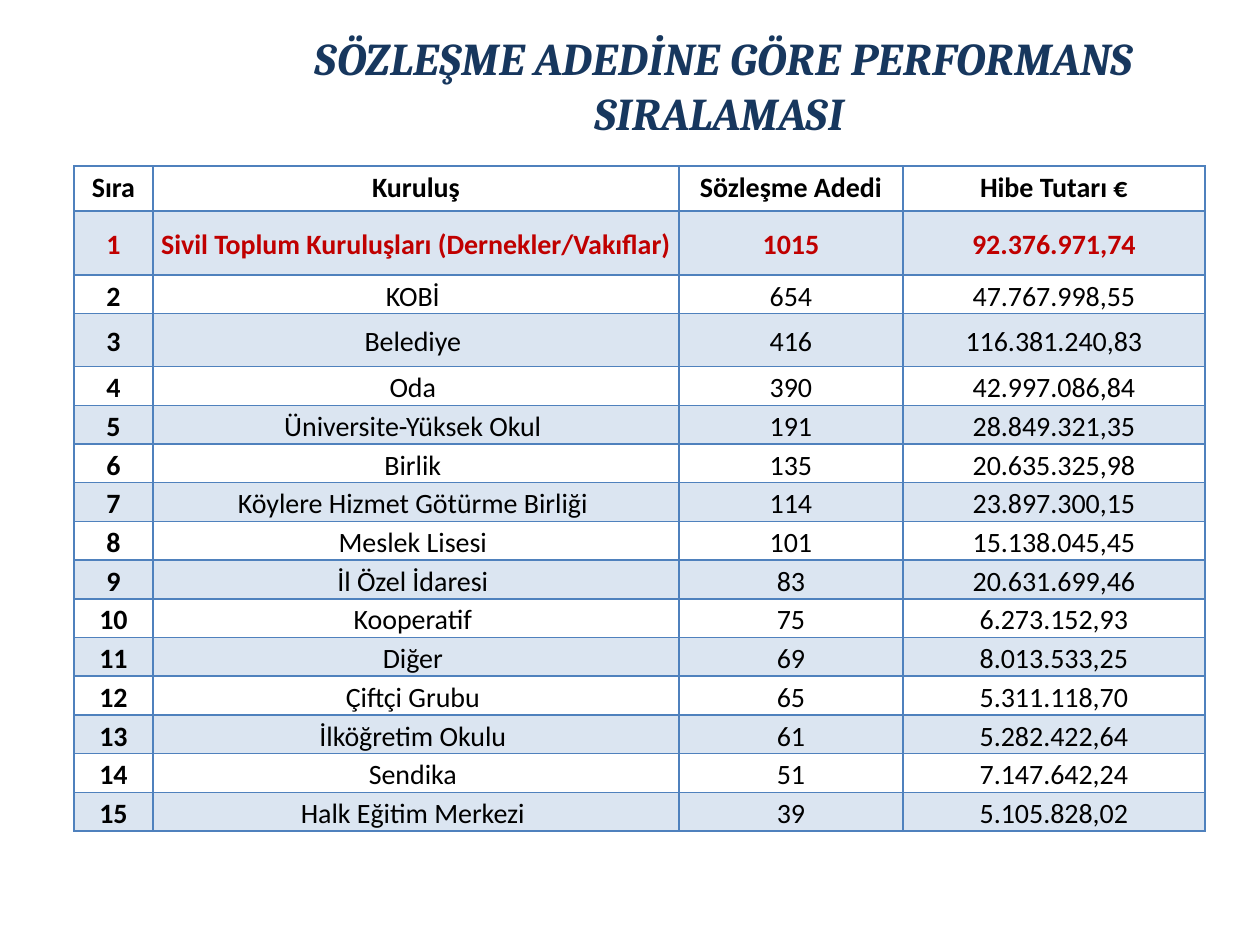
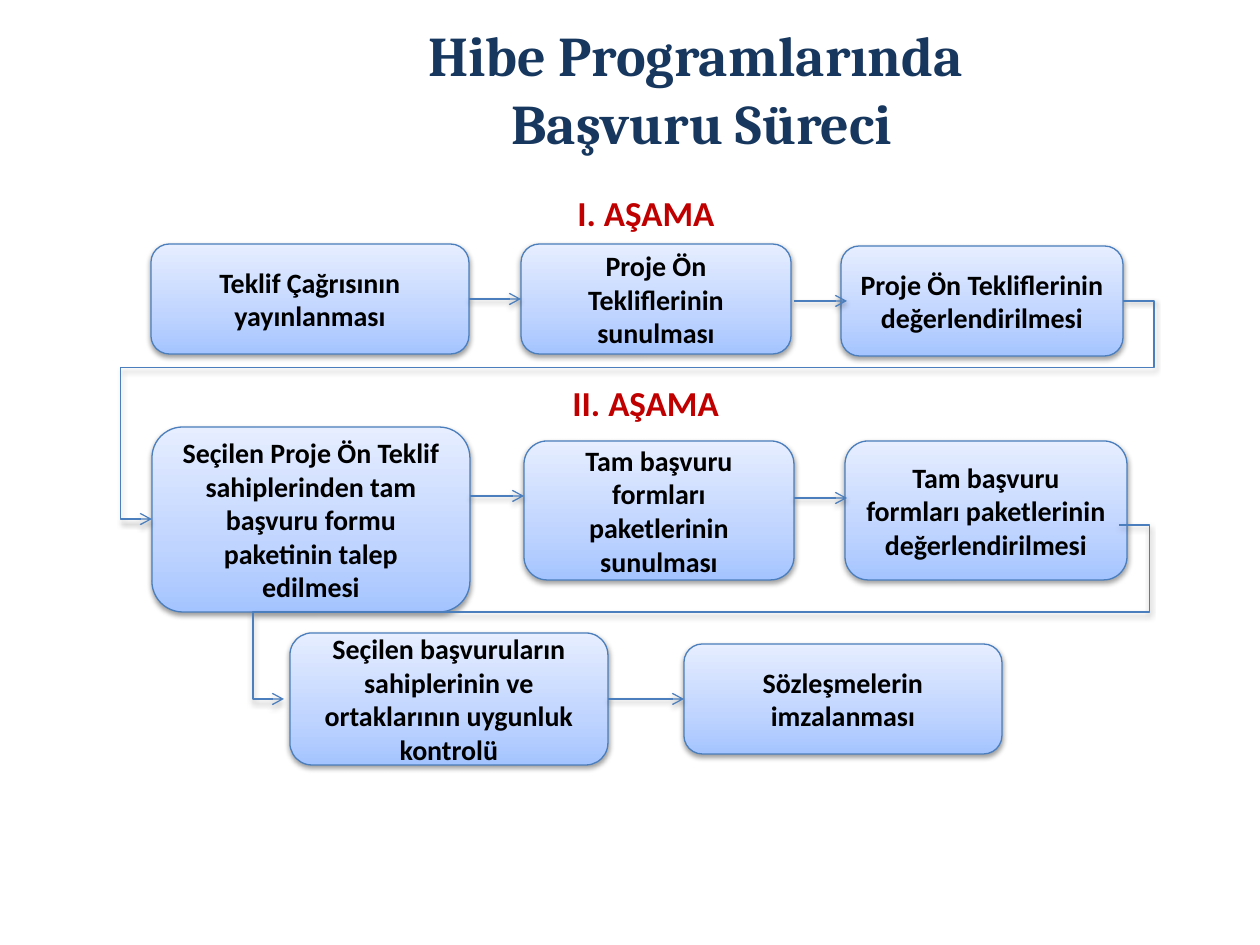
from copy import deepcopy

from lxml.etree import SubElement
from pptx import Presentation
from pptx.dml.color import RGBColor
from pptx.enum.shapes import MSO_CONNECTOR, MSO_SHAPE
from pptx.enum.text import MSO_ANCHOR, MSO_AUTO_SIZE, PP_ALIGN
from pptx.oxml.ns import qn
from pptx.util import Emu, Pt

EMU_PER_PX = 914400 / 126
NAVY = RGBColor(0x17, 0x37, 0x5E)
RED = RGBColor(0xC0, 0x00, 0x00)
BLACK = RGBColor(0x00, 0x00, 0x00)
BLUE = RGBColor(0x4F, 0x81, 0xBD)
OUTLINE = RGBColor(0x4B, 0x7E, 0xBC)
BOX_STOPS = [
    (0, RGBColor(0xA4, 0xC4, 0xFF)),
    (0.35, RGBColor(0xBF, 0xD4, 0xFF)),
    (1, RGBColor(0xE6, 0xEE, 0xFF)),
]
# Light Style 1 - Accent 1: blue rules around the header and under the last row
RULED_TABLE_STYLE = "{3C2FFA5D-87B4-456A-9821-1D502468CF0F}"

TABLE_HEIGHT = 665
COLUMN_WIDTHS = [79, 526, 224, 302]
ROW_HEIGHTS = [45, 64, 37, 53] + [37] * 12
HEADERS = ["Sıra", "Kuruluş", "Sözleşme Adedi", "Hibe Tutarı €"]
RANKING = [
    ("Sivil Toplum Kuruluşları (Dernekler/Vakıflar)", "1015", "92.376.971,74"),
    ("KOBİ ", "654", "47.767.998,55"),
    ("Belediye ", "416", "116.381.240,83\u00a0".strip()),
    ("Oda ", "390", "42.997.086,84"),
    ("Üniversite-Yüksek Okul ", "191", "28.849.321,35"),
    ("Birlik ", "135", "20.635.325,98"),
    ("Köylere Hizmet Götürme Birliği ", "114", "23.897.300,15"),
    ("Meslek Lisesi ", "101", "15.138.045,45"),
    ("İl Özel İdaresi ", "83", "20.631.699,46"),
    ("Kooperatif ", "75", "6.273.152,93"),
    ("Diğer ", "69", "8.013.533,25"),
    ("Çiftçi Grubu ", "65", "5.311.118,70"),
    ("İlköğretim Okulu ", "61", "5.282.422,64"),
    ("Sendika ", "51", "7.147.642,24"),
    ("Halk Eğitim Merkezi ", "39", "5.105.828,02"),
]

STEPS = {
    "call": ("Teklif Çağrısının yayınlanması", (151, 244, 318, 110)),
    "pre_submit": ("Proje Ön Tekliflerinin sunulması", (521, 244, 270, 110)),
    "pre_review": ("Proje Ön Tekliflerinin değerlendirilmesi", (841, 246, 282, 110)),
    "request": ("Seçilen Proje Ön Teklif sahiplerinden tam başvuru formu "
                "paketinin talep edilmesi", (152, 427, 318, 185)),
    "full_submit": ("Tam başvuru formları paketlerinin sunulması", (524, 441, 270, 139)),
    "full_review": ("Tam başvuru formları paketlerinin değerlendirilmesi",
                    (845, 441, 282, 139)),
    "contract": ("Sözleşmelerin imzalanması", (684, 644, 318, 110)),
    "check": ("Seçilen başvuruların sahiplerinin ve ortaklarının uygunluk kontrolü",
              (290, 633, 318, 132)),
}
JOINED_ARROWS = [("call", "pre_submit"), ("check", "contract")]
FREE_ARROWS = [(794, 301, 847, 301), (470, 496, 524, 496), (794, 498, 847, 498)]
RETURN_ARROWS = [((1123, 301, 152, 519), 0.306), ((1119, 525, 284, 699), 0.5)]
RETURN_MARGIN = 31
STAGES = [("I. AŞAMA", (565, 185, 164, 55)), ("II. AŞAMA", (560, 375, 174, 55))]


def px(*values):
    return [Emu(round(v * EMU_PER_PX)) for v in values]


def write(tf, text, size=16, color=BLACK, font="Calibri", bold=True, italic=False,
          align=PP_ALIGN.CENTER, spacing=None):
    """Fill a text frame, one paragraph for each line of text."""
    tf.text = text
    for p in tf.paragraphs:
        p.alignment = align
        if spacing:
            p.line_spacing = spacing
        for r in p.runs:
            r.font.name, r.font.size = font, Pt(size)
            r.font.bold, r.font.italic = bold, italic
            r.font.color.rgb = color


def add_titled_slide(prs, title, box, size, anchor, italic=False):
    slide = prs.slides.add_slide(prs.slide_layouts[5])
    sp = slide.shapes.title
    sp.left, sp.top, sp.width, sp.height = px(*box)
    tf = sp.text_frame
    tf.auto_size = MSO_AUTO_SIZE.NONE
    tf.word_wrap = True
    tf.vertical_anchor = anchor
    write(tf, title, size=size, color=NAVY, font="Cambria", italic=italic)
    return slide


def fill_band(cell):
    """Tint a cell with blue at 20 % opacity."""
    cell.fill.solid()
    cell.fill.fore_color.rgb = BLUE
    color = cell._tc.tcPr.find(f"{qn('a:solidFill')}/{qn('a:srgbClr')}")
    SubElement(color, qn("a:alpha"), val="20000")


def add_ranking_table(slide):
    rows = [HEADERS] + [(str(n), *row) for n, row in enumerate(RANKING, 1)]
    frame = slide.shapes.add_table(
        len(rows), len(HEADERS), *px(74, 166, sum(COLUMN_WIDTHS), TABLE_HEIGHT))
    table = frame.table
    table._tbl.tblPr.find(qn("a:tableStyleId")).text = RULED_TABLE_STYLE
    for column, width in zip(table.columns, px(*COLUMN_WIDTHS)):
        column.width = width
    for row, height in zip(table.rows, px(*ROW_HEIGHTS)):
        row.height = height
    frame.height, = px(TABLE_HEIGHT)
    for i, values in enumerate(rows):
        for j, value in enumerate(values):
            cell = table.cell(i, j)
            cell.margin_left, cell.margin_right = px(7, 7)
            cell.margin_top = cell.margin_bottom = 0
            cell.vertical_anchor = MSO_ANCHOR.MIDDLE if i else MSO_ANCHOR.TOP
            write(cell.text_frame, value, color=RED if i == 1 else BLACK,
                  bold=i < 2 or j == 0, spacing=1.13)
            if i % 2:
                fill_band(cell)
            else:
                cell.fill.background()


def add_shadow(sp):
    spPr = sp._element.spPr
    effects = spPr.find(qn("a:effectLst"))
    if effects is None:
        effects = SubElement(spPr, qn("a:effectLst"))
    shadow = SubElement(effects, qn("a:outerShdw"), blurRad="40000", dist="20000",
                        dir="5400000", rotWithShape="0")
    color = SubElement(shadow, qn("a:srgbClr"), val=str(BLACK))
    SubElement(color, qn("a:alpha"), val="38000")


def set_outline(sp):
    sp.line.color.rgb = OUTLINE
    sp.line.width = Pt(0.75)


def add_step(slide, text, box):
    sp = slide.shapes.add_shape(MSO_SHAPE.ROUNDED_RECTANGLE, *px(*box))
    sp.fill.gradient()
    sp.fill.gradient_angle = 90
    stops = sp._element.spPr.find(f"{qn('a:gradFill')}/{qn('a:gsLst')}")
    stops.insert(1, deepcopy(stops[0]))
    for stop, (position, color) in zip(sp.fill.gradient_stops, BOX_STOPS):
        stop.position = position
        stop.color.rgb = color
    set_outline(sp)
    sp.shadow.inherit = False
    add_shadow(sp)
    sp.text_frame.word_wrap = True
    sp.text_frame.vertical_anchor = MSO_ANCHOR.MIDDLE
    write(sp.text_frame, text)
    return sp


def add_arrow(slide, ends, kind=MSO_CONNECTOR.STRAIGHT):
    arrow = slide.shapes.add_connector(kind, *px(*ends))
    set_outline(arrow)
    SubElement(arrow._element.spPr.find(qn("a:ln")), qn("a:tailEnd"), type="arrow")
    add_shadow(arrow)
    return arrow


def join_steps(slide, start, end):
    arrow = add_arrow(slide, (0, 0, 1, 1))
    arrow.begin_connect(start, 3)
    arrow.end_connect(end, 1)


def add_return_arrow(slide, ends, turn):
    """Lead back to the next row; turn is the share of the height where it crosses."""
    arrow = add_arrow(slide, ends, MSO_CONNECTOR.ELBOW)
    geometry = arrow._element.spPr.find(qn("a:prstGeom"))
    geometry.set("prst", "bentConnector5")
    guides = geometry.find(qn("a:avLst"))
    if guides is None:
        guides = SubElement(geometry, qn("a:avLst"))
    margin = RETURN_MARGIN / abs(ends[0] - ends[2])
    for n, share in enumerate((-margin, turn, 1 + margin), 1):
        SubElement(guides, qn("a:gd"), name=f"adj{n}",
                   fmla=f"val {round(share * 100000)}")


def add_stage_label(slide, text, box):
    tf = slide.shapes.add_textbox(*px(*box)).text_frame
    tf.word_wrap = False
    write(tf, text, size=20, color=RED, align=PP_ALIGN.LEFT)


def build_ranking_slide(prs):
    slide = add_titled_slide(prs, "SÖZLEŞME ADEDİNE GÖRE PERFORMANS SIRALAMASI ",
                             (189, 24, 1071, 123), 26, MSO_ANCHOR.TOP, italic=True)
    add_ranking_table(slide)


def build_process_slide(prs):
    slide = add_titled_slide(prs, "Hibe Programlarında \nBaşvuru Süreci",
                             (203, 32, 998, 112), 32, MSO_ANCHOR.MIDDLE)
    steps = {key: add_step(slide, *step) for key, step in STEPS.items()}
    for start, end in JOINED_ARROWS:
        join_steps(slide, steps[start], steps[end])
    for ends in FREE_ARROWS:
        add_arrow(slide, ends)
    for ends, turn in RETURN_ARROWS:
        add_return_arrow(slide, ends, turn)
    for text, box in STAGES:
        add_stage_label(slide, text, box)


def main():
    prs = Presentation()
    prs.slide_width, prs.slide_height = px(1260, 945)
    build_ranking_slide(prs)
    build_process_slide(prs)
    prs.save("out.pptx")


if __name__ == "__main__":
    main()
